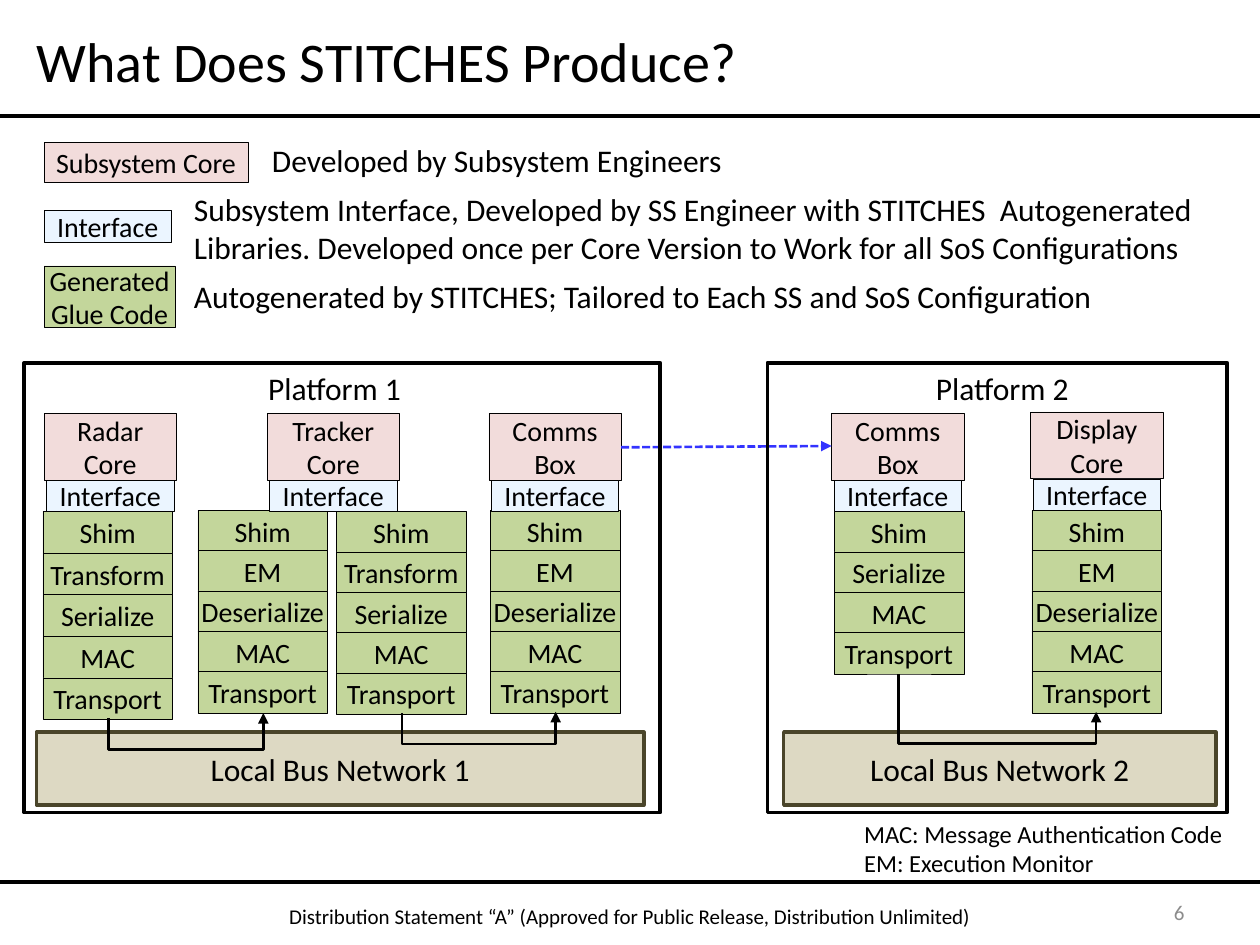
"""Build the slide that shows what STITCHES generates on two platforms."""
from lxml.etree import SubElement
from pptx import Presentation
from pptx.dml.color import RGBColor
from pptx.enum.dml import MSO_LINE
from pptx.enum.shapes import MSO_CONNECTOR, MSO_SHAPE
from pptx.enum.text import MSO_ANCHOR, PP_ALIGN
from pptx.oxml.ns import qn
from pptx.util import Inches, Pt

BLACK = RGBColor(0x00, 0x00, 0x00)
GRAY = RGBColor(0x8C, 0x8C, 0x8C)
BLUE = RGBColor(0x33, 0x33, 0xFF)
PINK = RGBColor(0xF2, 0xDC, 0xDB)
PALE_BLUE = RGBColor(0xEB, 0xF5, 0xFF)
GREEN = RGBColor(0xC3, 0xD6, 0x9B)
TAN = RGBColor(0xDD, 0xD9, 0xC3)
BROWN = RGBColor(0x4A, 0x45, 0x2A)

WIDTH, HEIGHT = 10, 7.5
CORE_WIDTH, CORE_HEIGHT = 1.05, 0.53
INTERFACE_WIDTH, INTERFACE_HEIGHT = 1.01, 0.25
LAYER_WIDTH, LAYER_HEIGHT = 1.03, 0.33
PLATFORM_TOP, PLATFORM_HEIGHT = 2.88, 3.57
BUS_TOP, BUS_HEIGHT = 5.81, 0.58

TITLE = "What Does STITCHES Produce?"
RULES = [0.92, 7]
LEGEND = [
    ("Subsystem Core", PINK, (0.35, 1.13, 1.62, 0.32), 0),
    ("Interface", PALE_BLUE, (0.35, 1.67, INTERFACE_WIDTH, INTERFACE_HEIGHT), 0.1),
    ("Generated Glue Code", GREEN, (0.35, 2.11, 1.04, 0.49), 0),
]
NOTES = [
    ("Developed by Subsystem Engineers", (2.06, 1.07, 3.81, 0.4)),
    ("Subsystem Interface, Developed by SS Engineer with STITCHES  Autogenerated\v"
     "Libraries. Developed once per Core Version to Work for all SoS Configurations",
     (1.44, 1.46, 8.22, 0.71)),
    ("Autogenerated by STITCHES; Tailored to Each SS and SoS Configuration",
     (1.44, 2.15, 7.36, 0.4)),
    ("Platform 1", (2.03, PLATFORM_TOP, 1.27, 0.4)),
    ("Platform 2", (7.33, PLATFORM_TOP, 1.27, 0.4)),
]
PLATFORMS = [(0.19, 5.05), (6.09, 3.65)]
BUSES = [("Local Bus Network 1", 0.29, 4.82), ("Local Bus Network 2", 6.22, 3.43)]
CORES = [
    ("Radar Core", 0.35, 3.28),
    ("Tracker Core", 2.12, 3.28),
    ("Comms Box", 3.88, 3.28),
    ("Comms Box", 6.6, 3.28),
    ("Display Core", 8.18, 3.27),
]
SENDER = ["Shim", "Transform", "Serialize", "MAC", "Transport"]
RECEIVER = ["Shim", "EM", "Deserialize", "MAC", "Transport"]
RELAY = ["Shim", "Serialize", "MAC", "Transport"]
STACKS = [
    (0.34, 4.06, 0.33, SENDER),
    (1.57, 4.05, 0.32, RECEIVER),
    (2.67, 4.06, 0.32, SENDER),
    (3.89, 4.05, 0.32, RECEIVER),
    (6.62, 4.06, 0.32, RELAY),
    (8.19, 4.05, 0.32, RECEIVER),
]
BUS_LINKS = [
    ((0.86, 5.7), (2.09, 5.66), 5.95),
    ((3.19, 5.66), (4.41, 5.65), 5.91),
    ((7.13, 5.35), (8.7, 5.65), 5.9),
]
ACRONYMS = ["MAC: Message Authentication Code", "EM: Execution Monitor"]
STATEMENT = "Distribution Statement “A” (Approved for Public Release, Distribution Unlimited)"


def apply(target, values):
    for name, value in values.items():
        setattr(target, name, value)


def write(box, lines, size, align=PP_ALIGN.LEFT, color=BLACK, side=0.1, **frame_format):
    frame = box.text_frame
    apply(frame, {"word_wrap": True, "margin_left": Inches(side),
                  "margin_right": Inches(side), **frame_format})
    for index, line in enumerate(lines):
        para = frame.add_paragraph() if index else frame.paragraphs[0]
        para.text = line
        para.alignment = align
        apply(para.font, {"name": "Calibri", "size": Pt(size)})
        para.font.color.rgb = color
        for span in para.runs:
            apply(span.font, {"name": "Calibri", "size": Pt(size)})
            span.font.color.rgb = color


def add_text(page, place, lines, size, **text_format):
    box = page.shapes.add_textbox(*map(Inches, place))
    write(box, lines, size, **text_format)
    return box


def add_block(page, place, fill, text="", size=16, side=0.1, line=BLACK, weight=0.25):
    block = page.shapes.add_shape(MSO_SHAPE.RECTANGLE, *map(Inches, place))
    block.shadow.inherit = False
    if fill is None:
        block.fill.background()
    else:
        block.fill.solid()
        block.fill.fore_color.rgb = fill
    block.line.color.rgb = line
    block.line.width = Pt(weight)
    if text:
        write(block, [text], size, PP_ALIGN.CENTER, side=side,
              vertical_anchor=MSO_ANCHOR.MIDDLE)


def add_line(page, start, end, weight, color=BLACK, kind=MSO_CONNECTOR.STRAIGHT, arrow=True):
    link = page.shapes.add_connector(kind, *map(Inches, (*start, *end)))
    link.line.color.rgb = color
    link.line.width = Pt(weight)
    if arrow:
        SubElement(link.line._get_or_add_ln(), qn("a:tailEnd"), type="triangle")
    SubElement(link.element.spPr, qn("a:effectLst"))
    return link


def add_bus_link(page, start, end, bottom):
    (left, top), (right, finish) = start, end
    half_run, half_rise = (right - left) / 2, (finish - top) / 2
    middle, center = (left + right) / 2, (top + finish) / 2
    link = add_line(page, (middle - half_rise, center + half_run),
                    (middle + half_rise, center - half_run), 1.5,
                    kind=MSO_CONNECTOR.ELBOW)
    properties = link.element.spPr
    properties.find(qn("a:xfrm")).set("rot", "5400000")
    adjust = round((bottom - top) / (finish - top) * 100000)
    guides = properties.find(qn("a:prstGeom")).get_or_add_avLst()
    SubElement(guides, qn("a:gd"), name="adj1", fmla=f"val {adjust}")


def main():
    deck = Presentation()
    apply(deck, {"slide_width": Inches(WIDTH), "slide_height": Inches(HEIGHT)})
    page = deck.slides.add_slide(deck.slide_layouts[5])
    title = page.shapes.title
    apply(title, dict(zip(("left", "top", "width", "height"),
                          map(Inches, (0.19, 0.12, 8.15, 0.72)))))
    write(title, [TITLE], 32, vertical_anchor=MSO_ANCHOR.MIDDLE)

    for top in RULES:
        add_line(page, (0, top), (WIDTH, top), 2.25, arrow=False)
    add_text(page, (0, 7.12, WIDTH, 0.34), [STATEMENT], 12, align=PP_ALIGN.CENTER)
    add_text(page, (7.17, 7.04, 2.33, 0.4), ["6"], 12, align=PP_ALIGN.RIGHT, color=GRAY,
             vertical_anchor=MSO_ANCHOR.MIDDLE)

    for text, fill, place, side in LEGEND:
        add_block(page, place, fill, text, side=side)
    for text, left, width in BUSES:
        add_block(page, (left, BUS_TOP, width, BUS_HEIGHT), TAN, text, 18, line=BROWN, weight=2)
    for left, top, pitch, layers in STACKS:
        for row, text in enumerate(layers):
            add_block(page, (left, top + row * pitch, LAYER_WIDTH, LAYER_HEIGHT),
                      GREEN, text, side=0)
    for text, left, top in CORES:
        add_block(page, (left, top, CORE_WIDTH, CORE_HEIGHT), PINK, text)
        add_block(page, (left + 0.02, top + CORE_HEIGHT, INTERFACE_WIDTH, INTERFACE_HEIGHT),
                  PALE_BLUE, "Interface")

    for start, end, bottom in BUS_LINKS:
        add_bus_link(page, start, end, bottom)
    radio = add_line(page, (4.93, 3.55), (6.6, 3.54), 1.5, BLUE)
    radio.line.dash_style = MSO_LINE.SQUARE_DOT

    for text, place in NOTES:
        add_text(page, place, [text], 18, word_wrap=False)
    acronyms = add_text(page, (6.76, 6.45, 3.14, 0.57), ACRONYMS, 14, margin_right=0)
    for para in acronyms.text_frame.paragraphs:
        indent = Inches(0.32)
        apply(para._p.get_or_add_pPr(), {"marL": indent, "indent": -indent})
    for left, width in PLATFORMS:
        add_block(page, (left, PLATFORM_TOP, width, PLATFORM_HEIGHT), None, weight=2)

    deck.save("out.pptx")


if __name__ == "__main__":
    main()
